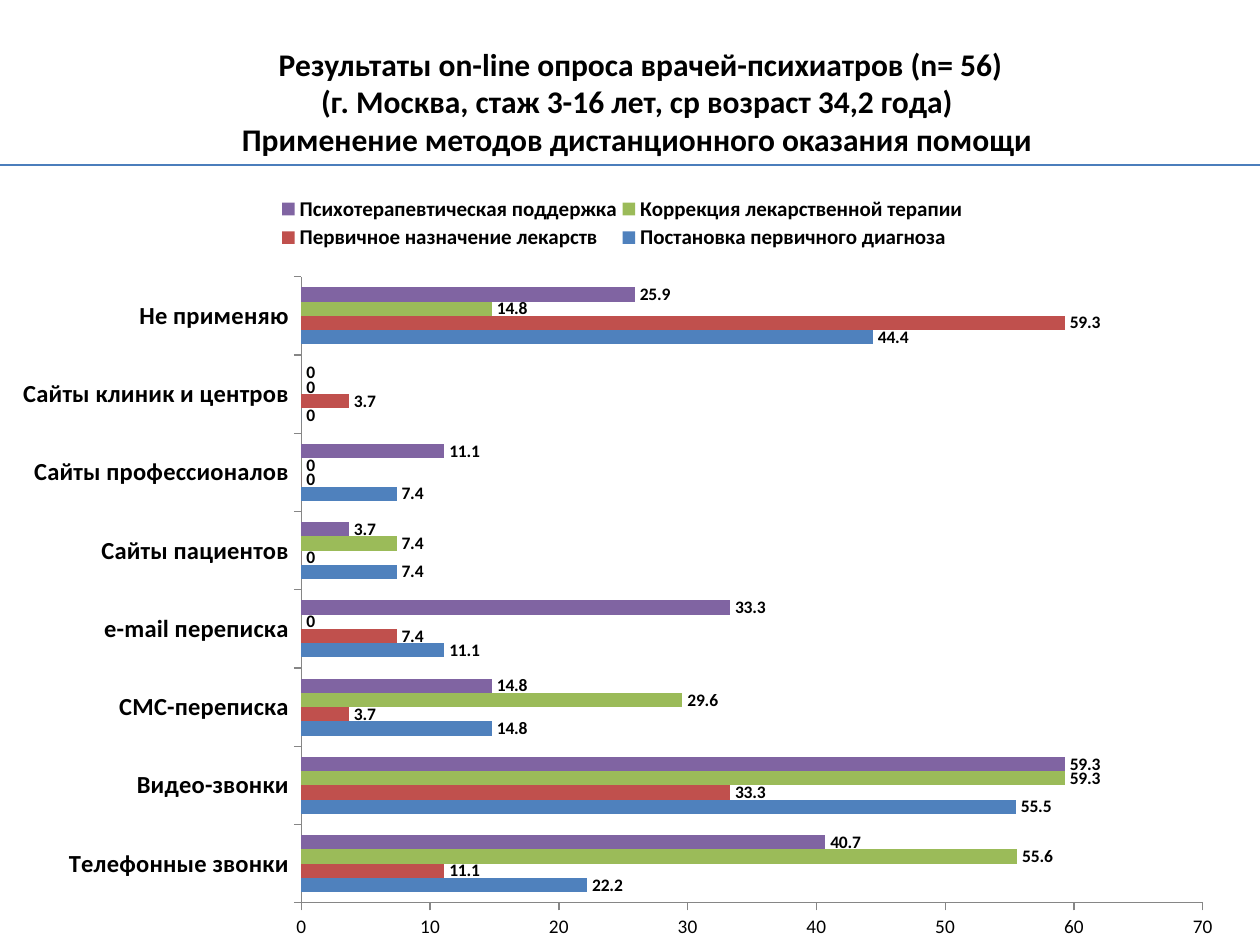
from lxml import etree
from pptx import Presentation
from pptx.chart.data import CategoryChartData
from pptx.dml.color import RGBColor
from pptx.enum.chart import XL_CHART_TYPE, XL_LABEL_POSITION, XL_LEGEND_POSITION, XL_TICK_MARK
from pptx.enum.shapes import MSO_CONNECTOR
from pptx.enum.text import MSO_ANCHOR, PP_ALIGN
from pptx.oxml import parse_xml
from pptx.oxml.ns import nsdecls, qn
from pptx.util import Inches, Pt

BAR = XL_CHART_TYPE.BAR_CLUSTERED
OUTSIDE_END = XL_LABEL_POSITION.OUTSIDE_END
TOP = XL_LEGEND_POSITION.TOP
TICK_OUT = XL_TICK_MARK.OUTSIDE
STRAIGHT = MSO_CONNECTOR.STRAIGHT
MIDDLE = MSO_ANCHOR.MIDDLE
CENTER = PP_ALIGN.CENTER

BLACK = RGBColor(0x00, 0x00, 0x00)
GRAY = RGBColor(0x86, 0x86, 0x86)
RULE_BLUE = RGBColor(0x4B, 0x7E, 0xBC)
BLUE = RGBColor(0x4F, 0x81, 0xBD)
RED = RGBColor(0xC0, 0x50, 0x4D)
GREEN = RGBColor(0x9B, 0xBB, 0x59)
PURPLE = RGBColor(0x80, 0x64, 0xA2)

TITLE = (
    "Результаты on-line опроса врачей-психиатров (n= 56)\n"
    "(г. Москва, стаж 3-16 лет, ср возраст 34,2 года) \n"
    "Применение методов дистанционного оказания помощи "
)
CATEGORIES = [
    "Телефонные звонки", "Видео-звонки", "СМС-переписка", "e-mail переписка",
    "Сайты пациентов", "Сайты профессионалов", "Сайты клиник и центров", "Не применяю",
]
SERIES = [
    ("Постановка первичного диагноза", BLUE, (22.2, 55.5, 14.8, 11.1, 7.4, 7.4, 0, 44.4)),
    ("Первичное назначение лекарств", RED, (11.1, 33.3, 3.7, 7.4, 0, 0, 3.7, 59.3)),
    ("Коррекция лекарственной терапии", GREEN, (55.6, 59.3, 29.6, 0, 7.4, 0, 0, 14.8)),
    ("Психотерапевтическая поддержка", PURPLE, (40.7, 59.3, 14.8, 33.3, 3.7, 11.1, 0, 25.9)),
]
PLOT_BOX = {"x": 0.24, "y": 0.12, "w": 0.73, "h": 0.82}
LEGEND_BOX = {"x": 0.22, "y": 0.01, "w": 0.56, "h": 0.08}


class SlideBuilder:
    """Holds the text style and the current slide, and adds elements to it."""

    def __init__(self, slide, font="Calibri", color=BLACK):
        self.slide = slide
        self.font = font
        self.color = color

    def style(self, font, size, bold=False):
        for name, value in {"name": self.font, "size": Pt(size), "bold": bold}.items():
            setattr(font, name, value)
        font.color.rgb = self.color

    def title(self, text, left, top, width, height):
        sp = self.slide.shapes.title
        box = {"left": left, "top": top, "width": width, "height": height}
        for name, value in box.items():
            setattr(sp, name, Inches(value))
        tf = sp.text_frame
        tf.word_wrap = True
        tf.vertical_anchor = MIDDLE
        p = tf.paragraphs[0]
        p.text = text
        p.alignment = CENTER
        for r in p.runs:
            self.style(r.font, 18, True)

    def line(self, x1, y1, x2, y2, color, width):
        ends = [Inches(v) for v in (x1, y1, x2, y2)]
        sp = self.slide.shapes.add_connector(STRAIGHT, *ends)
        sp.line.color.rgb = color
        sp.line.width = Pt(width)
        etree.SubElement(sp._element.spPr, qn("a:effectLst"))

    def layout(self, element, box, inner=False):
        for old in element.findall(qn("c:layout")):
            element.remove(old)
        target = '<c:layoutTarget val="inner"/>' if inner else ""
        modes = "".join(f'<c:{k}Mode val="edge"/>' for k in "xy")
        sizes = "".join(f'<c:{k} val="{v}"/>' for k, v in box.items())
        xml = (f'<c:layout {nsdecls("c")}><c:manualLayout>{target}{modes}{sizes}'
               "</c:manualLayout></c:layout>")
        position = element.find(qn("c:legendPos"))
        element.insert(0 if position is None else 1, parse_xml(xml))

    def axis(self, axis, size, bold=False):
        self.style(axis.tick_labels.font, size, bold)
        axis.has_major_gridlines = False
        axis.major_tick_mark = TICK_OUT
        axis.format.line.color.rgb = GRAY

    def bar_chart(self, left, top, width, height):
        data = CategoryChartData()
        data.categories = CATEGORIES
        for name, _, values in SERIES:
            data.add_series(name, values)
        box = [Inches(v) for v in (left, top, width, height)]
        chart = self.slide.shapes.add_chart(BAR, *box, data).chart
        chart.has_title = False
        self.style(chart.font, 11)
        self.axis(chart.category_axis, 14, True)
        self.axis(chart.value_axis, 11)
        scale = {"minimum_scale": 0, "maximum_scale": 70, "major_unit": 10}
        for name, value in scale.items():
            setattr(chart.value_axis, name, value)
        chart.has_legend = True
        chart.legend.position = TOP
        chart.legend.include_in_layout = False
        self.style(chart.legend.font, 12, True)
        plot = chart.plots[0]
        plot.gap_width = 150
        plot.vary_by_categories = False
        for series, (_, color, _) in zip(plot.series, SERIES):
            series.format.fill.solid()
            series.format.fill.fore_color.rgb = color
            labels = series.data_labels
            labels.show_value = True
            labels.position = OUTSIDE_END
            self.style(labels.font, 10, True)
        self.layout(chart._chartSpace.chart.plotArea, PLOT_BOX, inner=True)
        self.layout(chart.legend._element, LEGEND_BOX)


def main():
    prs = Presentation()
    prs.slide_width = Inches(10)
    prs.slide_height = Inches(7.5)
    s = SlideBuilder(prs.slides.add_slide(prs.slide_layouts[5]))
    s.title(TITLE, 0.67, 0.3, 8.83, 1.01)
    s.bar_chart(0.04, 1.47, 9.8, 6.06)
    s.line(0, 1.31, 10, 1.31, RULE_BLUE, 0.75)
    prs.save("out.pptx")


if __name__ == "__main__":
    main()
